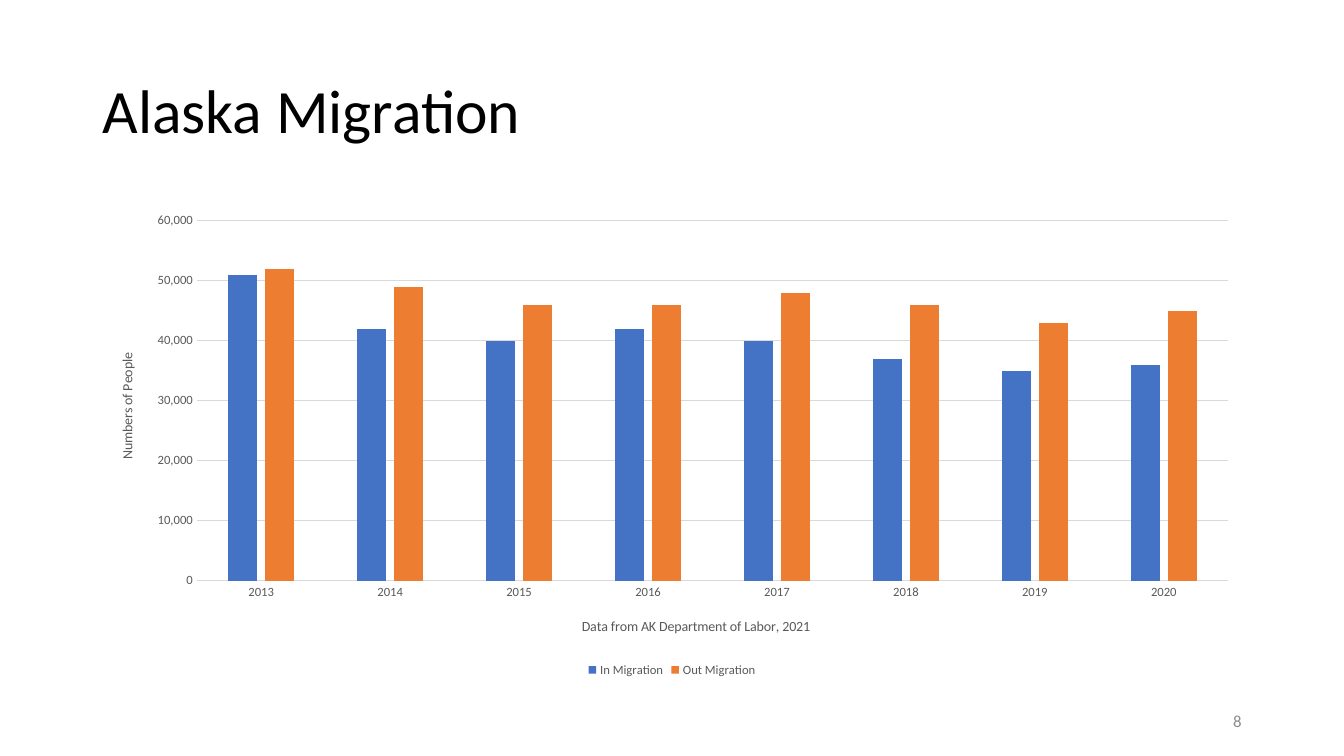
from dataclasses import dataclass

from lxml.etree import SubElement
from pptx import Presentation
from pptx.chart.data import CategoryChartData
from pptx.dml.color import RGBColor
from pptx.enum.chart import XL_CHART_TYPE, XL_LEGEND_POSITION, XL_TICK_MARK
from pptx.enum.text import MSO_ANCHOR, MSO_AUTO_SIZE, PP_ALIGN
from pptx.oxml.ns import qn
from pptx.util import Cm, Pt


@dataclass(frozen=True)
class Theme:
    font: str = "Calibri"
    title: RGBColor = RGBColor(0x00, 0x00, 0x00)
    label: RGBColor = RGBColor(0x59, 0x59, 0x59)
    grid: RGBColor = RGBColor(0xD9, 0xD9, 0xD9)
    number: RGBColor = RGBColor(0x8C, 0x8C, 0x8C)
    series: tuple = (RGBColor(0x44, 0x72, 0xC4), RGBColor(0xED, 0x7D, 0x31))
    title_size: int = 44
    number_size: int = 12
    axis_title_size: int = 10
    label_size: int = 9


THEME = Theme()


def style_font(font, size, color):
    font.name = THEME.font
    font.size = Pt(size)
    font.bold = False
    font.color.rgb = color


def place(element, index, **fractions):
    """Give a chart part a manual layout in fractions of the chart area."""
    for old in element.findall(qn("c:layout")):
        element.remove(old)
    layout = SubElement(element, qn("c:layout"))
    manual = SubElement(layout, qn("c:manualLayout"))
    if "w" in fractions:
        SubElement(manual, qn("c:layoutTarget")).set("val", "inner")
    for axis in "xy":
        SubElement(manual, qn(f"c:{axis}Mode")).set("val", "edge")
    for name, value in fractions.items():
        SubElement(manual, qn(f"c:{name}")).set("val", str(value))
    element.insert(index, layout)


prs = Presentation()
prs.slide_width, prs.slide_height = Cm(33.87), Cm(19.05)
s = prs.slides.add_slide(prs.slide_layouts[5])

# Title
title = s.shapes.title
title.left, title.top, title.width, title.height = Cm(2.33), Cm(1.01), Cm(29.21), Cm(3.68)
tf = title.text_frame
tf.text = "Alaska Migration"
tf.auto_size = MSO_AUTO_SIZE.NONE
tf.vertical_anchor = MSO_ANCHOR.MIDDLE
p = tf.paragraphs[0]
p.alignment = PP_ALIGN.LEFT
p.line_spacing = 0.9
style_font(p.runs[0].font, THEME.title_size, THEME.title)

# Migration chart
data = CategoryChartData(number_format="#,##0")
data.categories = [str(year) for year in range(2013, 2021)]
data.add_series("In Migration", (51000, 42000, 40000, 42000, 40000, 37000, 35000, 36000))
data.add_series("Out Migration", (52000, 49000, 46000, 46000, 48000, 46000, 43000, 45000))
chart = s.shapes.add_chart(
    XL_CHART_TYPE.COLUMN_CLUSTERED, Cm(2.33), Cm(5.08), Cm(29.21), Cm(12.09), data
).chart
chart.has_title = False
style_font(chart.font, THEME.label_size, THEME.label)

plot = chart.plots[0]
plot.gap_width, plot.overlap = 219, -27
plot.vary_by_categories = False
for series, color in zip(plot.series, THEME.series):
    series.format.fill.solid()
    series.format.fill.fore_color.rgb = color

cat_axis, val_axis = chart.category_axis, chart.value_axis
for axis, text, x, y in (
    (cat_axis, "Data from AK Department of Labor, 2021", 0.42, 0.86),
    (val_axis, "Numbers of People", 0.02, 0.31),
):
    axis.major_tick_mark = axis.minor_tick_mark = XL_TICK_MARK.NONE
    style_font(axis.tick_labels.font, THEME.label_size, THEME.label)
    tf = axis.axis_title.text_frame
    tf.text = text
    style_font(tf.paragraphs[0].runs[0].font, THEME.axis_title_size, THEME.label)
    place(axis.axis_title.element, 1, x=x, y=y)

val_axis.minimum_scale, val_axis.maximum_scale, val_axis.major_unit = 0, 60000, 10000
val_axis.tick_labels.number_format = "#,##0"
val_axis.tick_labels.number_format_is_linked = False
val_axis.format.line.fill.background()
val_axis.has_major_gridlines = True
for line in (cat_axis.format.line, val_axis.major_gridlines.format.line):
    line.color.rgb = THEME.grid
    line.width = Pt(0.75)

chart.has_legend = True
chart.legend.position = XL_LEGEND_POSITION.BOTTOM
chart.legend.include_in_layout = False
style_font(chart.legend.font, THEME.label_size, THEME.label)
plot_area = chart.element.find(f".//{qn('c:plotArea')}")
place(plot_area, 0, x=0.09, y=0.04, w=0.89, h=0.75)

# Slide number
number = s.shapes.add_textbox(Cm(23.92), Cm(17.66), Cm(7.62), Cm(1.01))
tf = number.text_frame
tf.word_wrap = True
tf.vertical_anchor = MSO_ANCHOR.MIDDLE
tf.text = "8"
p = tf.paragraphs[0]
p.alignment = PP_ALIGN.RIGHT
style_font(p.runs[0].font, THEME.number_size, THEME.number)

prs.save("out.pptx")
